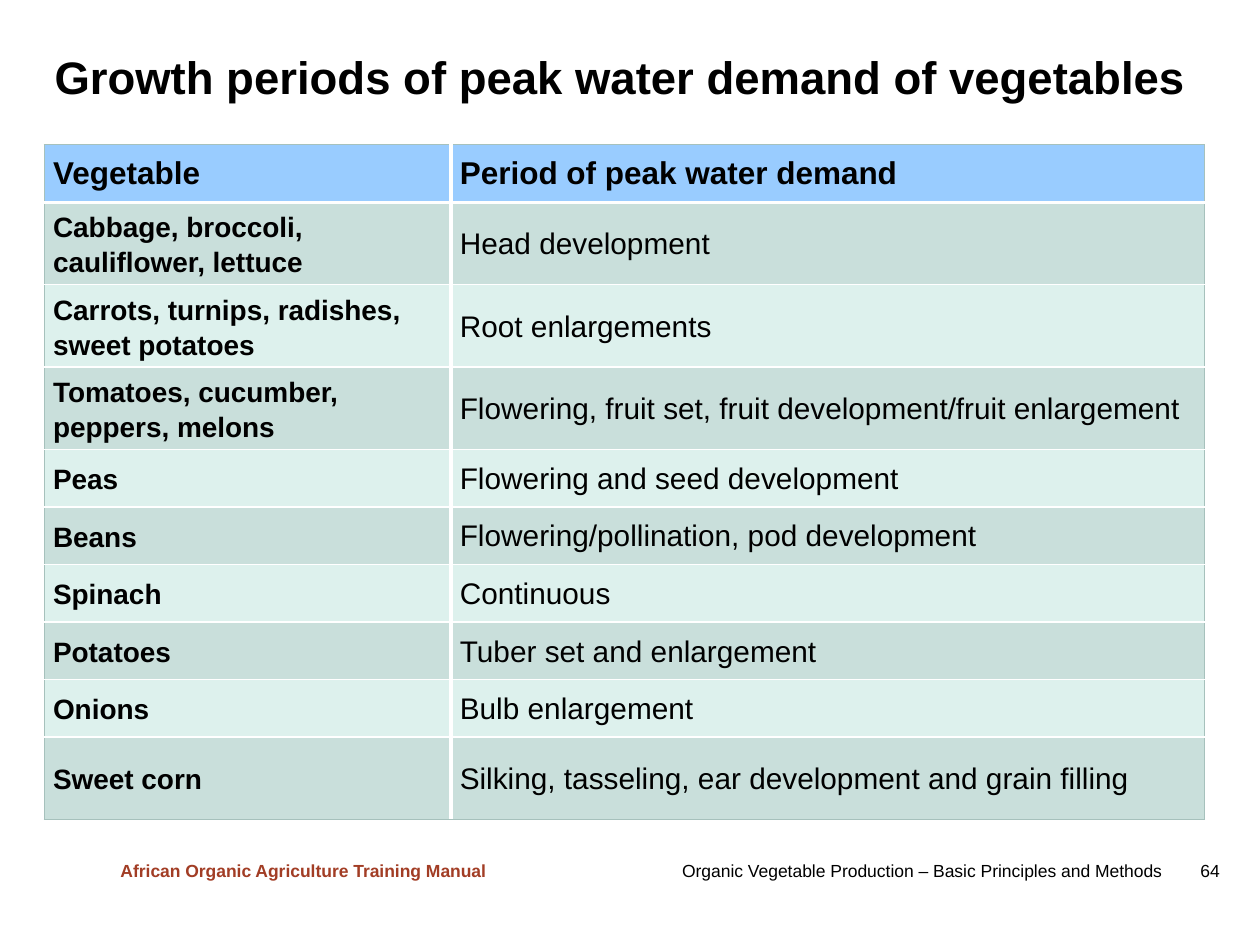
from lxml.etree import SubElement
from pptx import Presentation
from pptx.dml.color import RGBColor
from pptx.enum.text import MSO_ANCHOR
from pptx.oxml import parse_xml
from pptx.oxml.ns import nsdecls, qn
from pptx.util import Cm, Pt


def color(value):
    return RGBColor.from_string(value)


def add_label(text, left, top, width, height, size, bold, ink):
    box = page.shapes.add_textbox(Cm(left), Cm(top), Cm(width), Cm(height))
    frame = box.text_frame
    frame.word_wrap = True
    frame.vertical_anchor = MSO_ANCHOR.MIDDLE
    para = frame.paragraphs[0]
    para.text = text
    para.font.name = "Arial"
    para.font.size = Pt(size)
    para.font.bold = bold
    para.font.color.rgb = color(ink)
    return box


deck = Presentation()
deck.slide_width = Cm(25.4)
deck.slide_height = Cm(19.05)
page = deck.slides.add_slide(deck.slide_layouts[6])

title = add_label("Growth periods of peak water demand of vegetables",
                  1.1, 0.91, 23.97, 1.4, 26, True, "000000")
title.text_frame.margin_left = title.text_frame.margin_top = 0

add_label("African Organic Agriculture Training Manual",
          2.18, 17.2, 8.2, 0.69, 10, True, "A23D25")
footer = add_label("Organic Vegetable Production – Basic Principles and Methods\t64",
                   13.5, 17.2, 11.68, 0.69, 10, False, "000000")
properties = footer.text_frame.paragraphs[0]._p.get_or_add_pPr()
tabs = parse_xml(f"<a:tabLst {nsdecls('a')}/>")
SubElement(tabs, qn("a:tab"), pos=str(Cm(10.45)), algn="l")
properties.insert(0, tabs)

rows = [
    ("Vegetable", "Period of peak water demand"),
    ("Cabbage, broccoli, cauliflower, lettuce", "Head development"),
    ("Carrots, turnips, radishes, sweet potatoes", "Root enlargements"),
    ("Tomatoes, cucumber, peppers, melons",
     "Flowering, fruit set, fruit development/fruit enlargement"),
    ("Peas", "Flowering and seed development"),
    ("Beans", "Flowering/pollination, pod development"),
    ("Spinach", "Continuous"),
    ("Potatoes", "Tuber set and enlargement"),
    ("Onions", "Bulb enlargement"),
    ("Sweet corn", "Silking, tasseling, ear development and grain filling"),
]
last = len(rows) - 1
tall_rows = (1, 2, 3, last)
outer, divider, inner = ("A6C1BC", 0.75), ("FFFFFF", 2.25), ("FFFFFF", 1)

table = page.shapes.add_table(len(rows), 2, Cm(0.89), Cm(2.92), Cm(23.39), Cm(13.6)).table
table.columns[0].width = Cm(8.2)
table.columns[1].width = Cm(15.19)

for row, texts in enumerate(rows):
    table.rows[row].height = Cm(1.66 if row in tall_rows else 1.16)
    for column, text in enumerate(texts):
        header = row == 0
        cell = table.cell(row, column)
        cell.vertical_anchor = MSO_ANCHOR.MIDDLE
        cell.margin_left = cell.margin_right = Cm(0.18)
        cell.margin_top = cell.margin_bottom = Cm(0 if header else 0.1)
        cell.fill.solid()
        cell.fill.fore_color.rgb = color(
            "99CCFF" if header else "C9DFDB" if row % 2 else "DDF1ED")

        para = cell.text_frame.paragraphs[0]
        para.text = text
        para.line_spacing = Pt(20)
        para.font.name = "Arial"
        para.font.size = Pt(18 if header else 17 if column else 16)
        para.font.bold = header or column == 0
        para.font.color.rgb = color("000000")

        borders = {
            "lnL": divider if column else outer,
            "lnR": outer if column else divider,
            "lnT": outer if header else divider if row == 1 else inner,
            "lnB": divider if header else outer if row == last else inner,
        }
        for position, (side, (ink, width)) in enumerate(borders.items()):
            cell._tc.get_or_add_tcPr().insert(position, parse_xml(
                f'<a:{side} {nsdecls("a")} w="{Pt(width)}"><a:solidFill>'
                f'<a:srgbClr val="{ink}"/></a:solidFill></a:{side}>'))

deck.save("out.pptx")
